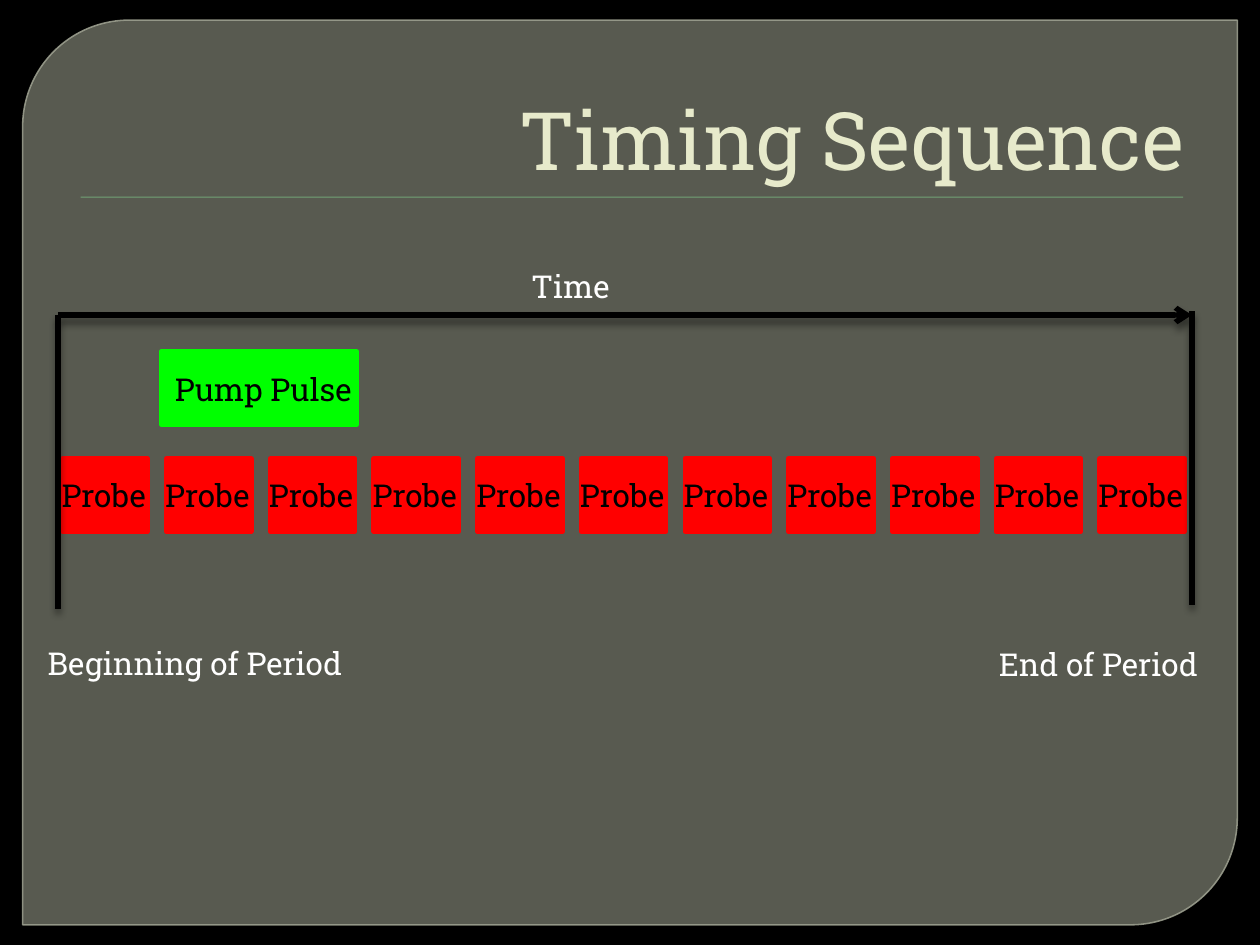
from lxml import etree
from pptx import Presentation
from pptx.dml.color import RGBColor
from pptx.enum.shapes import MSO_CONNECTOR, MSO_SHAPE
from pptx.enum.text import MSO_ANCHOR, MSO_AUTO_SIZE, PP_ALIGN
from pptx.oxml import parse_xml
from pptx.oxml.ns import nsdecls, qn
from pptx.util import Inches, Pt

RECT, DIAG_RECT = MSO_SHAPE.RECTANGLE, MSO_SHAPE.ROUND_2_DIAG_RECTANGLE
STRAIGHT = MSO_CONNECTOR.STRAIGHT
LEFT, RIGHT = PP_ALIGN.LEFT, PP_ALIGN.RIGHT
TOP, BOTTOM = MSO_ANCHOR.TOP, MSO_ANCHOR.BOTTOM
FIT = MSO_AUTO_SIZE.SHAPE_TO_FIT_TEXT

W, H = 10, 7.5
FONT = "Roboto Slab"
BLACK, WHITE, GREEN, RED = "000000", "FFFFFF", "00FF00", "FF0000"
LABEL_W, LABEL_H = 2.77, 0.4
PROBES = 11


def rgb(value):
    return RGBColor.from_string(value)


def set_alpha(fill, percent):
    color = fill._xPr.find(qn("a:solidFill"))[0]
    etree.SubElement(color, qn("a:alpha"), val=str(percent * 1000))


def add_shadow(shape, alpha, blur, dist):
    shape._element.spPr.append(parse_xml(
        f'<a:effectLst {nsdecls("a")}><a:outerShdw blurRad="{Pt(blur)}" '
        f'dist="{Pt(dist)}" dir="5400000" rotWithShape="0"><a:srgbClr val="{BLACK}">'
        f'<a:alpha val="{alpha * 1000}"/></a:srgbClr></a:outerShdw></a:effectLst>'))


def add_block(s, box, fill, line=None, width=3, kind=RECT):
    sp = s.shapes.add_shape(kind, *map(Inches, box))
    sp.fill.solid()
    sp.fill.fore_color.rgb = rgb(fill)
    if line:
        sp.line.color.rgb = rgb(line)
        sp.line.width = Pt(width)
    else:
        sp.line.fill.background()
    sp.shadow.inherit = False
    return sp


def add_text(s, box, text, color, size=18, align=LEFT, anchor=TOP):
    tf = s.shapes.add_textbox(*map(Inches, box)).text_frame
    tf.word_wrap = True
    tf.vertical_anchor = anchor
    p = tf.paragraphs[0]
    p.text = text
    p.alignment = align
    p.font.name, p.font.size = FONT, Pt(size)
    p.font.color.rgb = rgb(color)
    return tf


def add_label(s, x, y, text, color=WHITE):
    add_text(s, (x, y, LABEL_W, LABEL_H), text, color).auto_size = FIT


def add_line(s, x1, y1, x2, y2, arrow=False):
    c = s.shapes.add_connector(STRAIGHT, *map(Inches, (x1, y1, x2, y2)))
    c.line.color.rgb = rgb(BLACK)
    c.line.width = Pt(3)
    if arrow:
        etree.SubElement(c.line._get_or_add_ln(), qn("a:tailEnd"), type="arrow")
    add_shadow(c, 43, 4, 3)


def draw_frame(s, box):
    """Rounded panel behind the whole slide."""
    panel = add_block(s, box, "888B7B", "9DA090", 0.87, DIAG_RECT)
    panel.adjustments[0], panel.adjustments[1] = 0.118, 0
    set_alpha(panel.fill, 65)
    set_alpha(panel.line.fill, 88)


def draw_title(s, box):
    """Right-aligned title with a thin rule beneath it."""
    x, y, w, h = box
    rule = add_block(s, (x + 0.14, y + h + 0.03, w - 0.25, 0.01), "72A376")
    rule.shadow.inherit = True
    add_shadow(rule, 75, 1, 1)
    add_text(s, box, "Timing Sequence", "E7EACB", 46, RIGHT, BOTTOM)


def draw_pulses(s, box):
    """Pump pulse above an evenly spaced row of probe pulses."""
    x, y, w, h = box
    block_w, block_h = 0.67, 0.58
    pitch = (w - block_w) / (PROBES - 1)
    probe_y = y + h - block_h
    pump_x = x + 0.78
    add_block(s, (pump_x, y, 1.55, block_h), GREEN, GREEN)
    lefts = [x + i * pitch for i in range(PROBES)]
    for left in lefts:
        add_block(s, (left, probe_y, block_w, block_h), RED, RED)
    # Labels lie over the blocks
    add_label(s, pump_x + 0.01, y + 0.1, "Pump Pulse", BLACK)
    for left in lefts:
        add_label(s, left - 0.11, probe_y + 0.09, "Probe", BLACK)


def draw_timeline(s, box):
    """Time arrow between the two period markers, with captions."""
    x, y, w, h = box
    right, bottom = x + w, y + h
    draw_pulses(s, (x + 0.04, y + 0.29, w - 0.1, 1.43))
    add_line(s, x, y, x, bottom)
    add_line(s, right, y - 0.03, right, bottom - 0.03)
    add_line(s, x, y, right, y, arrow=True)
    add_label(s, x + 3.66, y - 0.43, "Time")
    add_label(s, x - 0.18, bottom + 0.23, "Beginning of Period")
    add_label(s, right - 1.63, bottom + 0.24, "End of Period")


def main():
    prs = Presentation()
    prs.slide_width, prs.slide_height = Inches(W), Inches(H)
    s = prs.slides.add_slide(prs.slide_layouts[6])
    s.background.fill.solid()
    s.background.fill.fore_color.rgb = rgb(BLACK)
    draw_frame(s, (0.18, 0.16, W - 0.36, H - 0.32))
    draw_title(s, (0.05 * W, 0.28, 0.9 * W, H / 6))
    draw_timeline(s, (0.46, H / 3, 0.9 * W, 2.33))
    prs.save("out.pptx")


if __name__ == "__main__":
    main()
